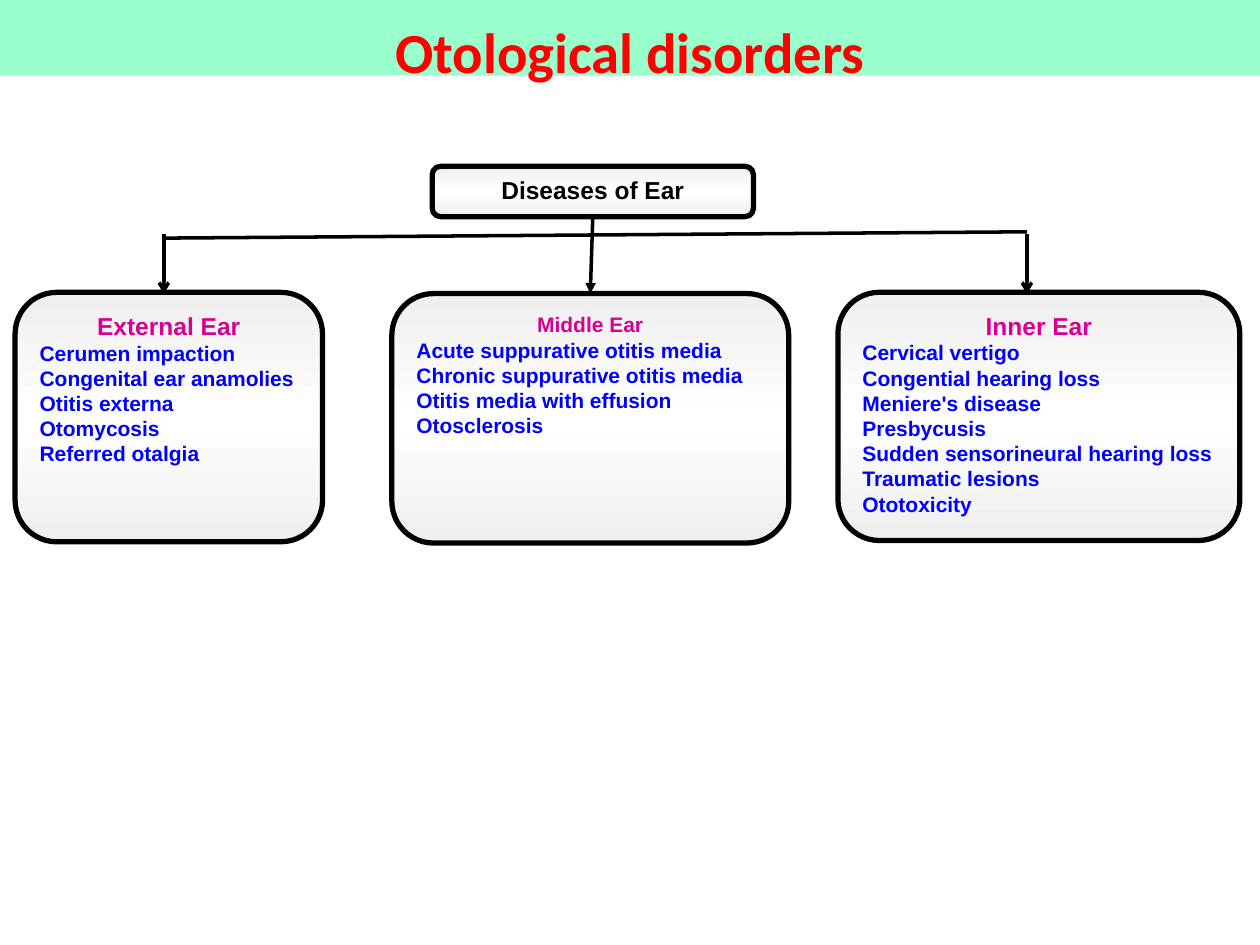
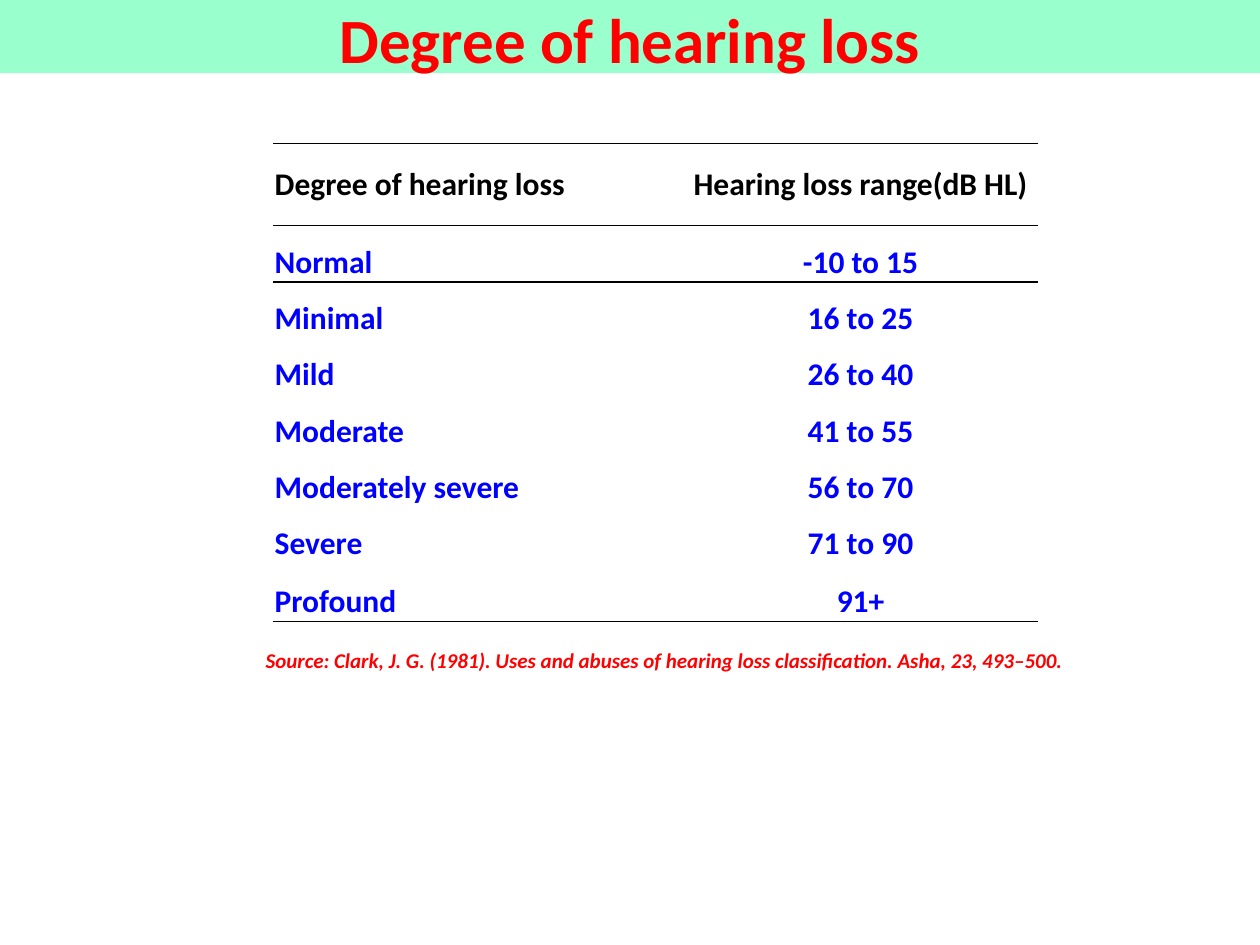
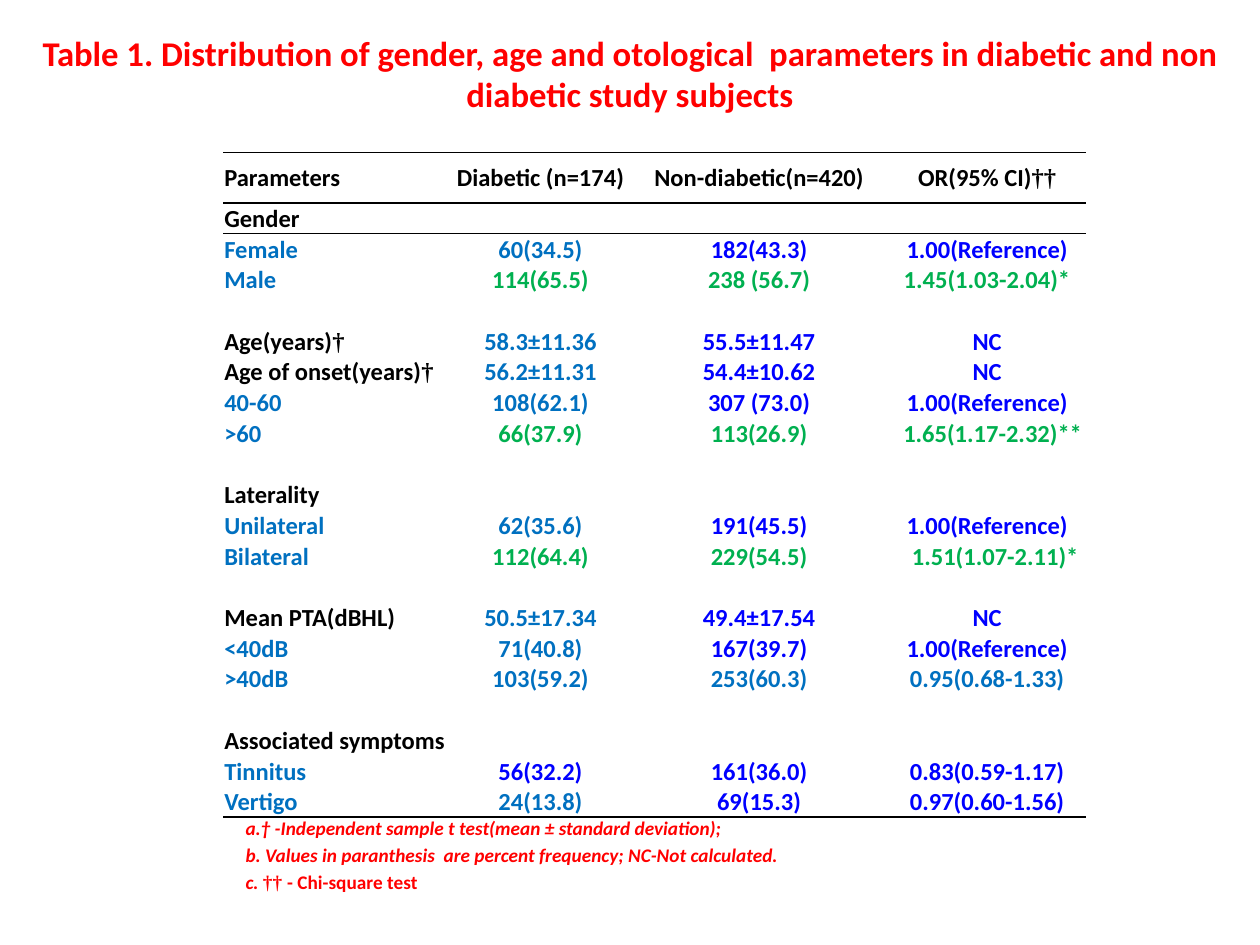
from copy import deepcopy
from dataclasses import dataclass
from itertools import groupby
from typing import NamedTuple, Optional, Sequence

from lxml.etree import SubElement
from pptx import Presentation
from pptx.dml.color import RGBColor
from pptx.enum.shapes import MSO_CONNECTOR, MSO_SHAPE
from pptx.enum.text import MSO_ANCHOR as Anchor, PP_ALIGN as Align
from pptx.oxml.ns import qn
from pptx.util import Inches, Pt

# Grid: 100 columns by 75 rows of square units
COLUMNS, ROWS = 100, 75
UNIT = Inches(0.1)

# Shared colours and fonts
RED = RGBColor(0xFF, 0x00, 0x00)
MINT = RGBColor(0x99, 0xFF, 0xCC)
MAGENTA = RGBColor(0xD6, 0x00, 0x93)
BLUE = RGBColor(0x00, 0x00, 0xFF)
SKY = RGBColor(0x00, 0x70, 0xC0)
GREEN = RGBColor(0x00, 0xB0, 0x50)
BLACK = RGBColor(0x00, 0x00, 0x00)
WHITE = RGBColor(0xFF, 0xFF, 0xFF)
SILVER = RGBColor(0xEF, 0xEF, 0xEF)
SANS, CHART_SANS, SERIF = "Calibri", "Arial", "Times New Roman"

PLAIN_TABLE = "{2D5ABB26-0587-4C30-8999-92F81FD0307C}"
CELL_INSET = Inches(0.01)


def units(count: float) -> int:
    return round(count * UNIT)


class Box(NamedTuple):
    """Left, top, width and height in grid units."""
    left: float
    top: float
    width: float
    height: float

    def lengths(self) -> list[int]:
        return [units(side) for side in self]


@dataclass(frozen=True)
class EarPart:
    name: str
    box: Box
    diseases: Sequence[str] = ()
    name_size: float = 14
    name_color: RGBColor = MAGENTA


@dataclass(frozen=True)
class TableRow:
    texts: Sequence[str]
    colors: Sequence[RGBColor]
    height: float
    anchor: Anchor = Anchor.BOTTOM
    ruled_above: bool = False
    ruled_below: bool = False
    nudge: float = 0  # extra left inset of the last cell


# Text and drawing helpers
def write(paragraph, text: str, *, size: float, color: RGBColor, font: str = SANS,
          italic: bool = False, align: Align = Align.LEFT) -> None:
    paragraph.alignment = align
    run = paragraph.add_run()
    run.text = text
    run.font.name, run.font.size = font, Pt(size)
    run.font.bold, run.font.italic = True, italic
    run.font.color.rgb = color


def add_text_frame(slide, box: Box, fill: Optional[RGBColor] = None):
    area = slide.shapes.add_textbox(*box.lengths())
    if fill is not None:
        area.fill.solid()
        area.fill.fore_color.rgb = fill
    area.text_frame.word_wrap = True
    return area.text_frame


def add_title(slide, text: str, box: Box, *, size: float, drop: float,
              band: Optional[RGBColor] = MINT) -> None:
    """Title centred in its band, lowered by drop grid units."""
    frame = add_text_frame(slide, box, band)
    frame.vertical_anchor = Anchor.MIDDLE
    frame.margin_top, frame.margin_bottom = units(2 * drop), 0
    write(frame.paragraphs[0], text, size=size, color=RED, align=Align.CENTER)


def add_ear_part(slide, part: EarPart):
    panel = slide.shapes.add_shape(MSO_SHAPE.ROUNDED_RECTANGLE, *part.box.lengths())
    panel.shadow.inherit = False
    panel.line.color.rgb, panel.line.width = BLACK, Pt(3)

    # Silver to white and back, from top to bottom
    panel.fill.gradient()
    panel.fill.gradient_angle = 90
    for stop in panel.fill.gradient_stops:
        stop.color.rgb = SILVER
    stops = panel.element.spPr.find(".//" + qn("a:gsLst"))
    stops.insert(1, deepcopy(stops[0]))
    middle = panel.fill.gradient_stops[1]
    middle.position, middle.color.rgb = 0.5, WHITE

    frame = panel.text_frame
    frame.word_wrap, frame.vertical_anchor = True, Anchor.TOP
    write(frame.paragraphs[0], part.name, size=part.name_size, color=part.name_color,
          font=CHART_SANS, align=Align.CENTER)
    for disease in part.diseases:
        write(frame.add_paragraph(), disease, size=12, color=BLUE, font=CHART_SANS)
    return panel


def add_line(slide, start: tuple[float, float], end: tuple[float, float],
             arrowhead: str = ""):
    line = slide.shapes.add_connector(
        MSO_CONNECTOR.STRAIGHT, *map(units, start), *map(units, end))
    line.line.color.rgb, line.line.width = BLACK, Pt(2)
    properties = line.element.spPr
    if arrowhead:
        SubElement(properties.find(qn("a:ln")), qn("a:tailEnd"), type=arrowhead)
    SubElement(properties, qn("a:effectLst"))
    return line


def rule_cell(cell, sides: Sequence[str]) -> None:
    properties = cell._tc.get_or_add_tcPr()
    for position, side in enumerate(sides):
        border = SubElement(properties, qn(f"a:{side}"), w=str(Pt(1)))
        fill = SubElement(border, qn("a:solidFill"))
        SubElement(fill, qn("a:srgbClr"), val=str(BLACK))
        properties.insert(position, border)


def fill_cell(cell, text: str, *, size: float, color: RGBColor, align: Align) -> None:
    paragraph = cell.text_frame.paragraphs[0]
    if not text:
        SubElement(paragraph._p, qn("a:endParaRPr"), sz=str(round(size * 100)))
    for is_dagger, letters in groupby(text, lambda letter: letter == "†"):
        write(paragraph, "".join(letters), size=size, color=color, align=align,
              font=SERIF if is_dagger else SANS)


def add_ruled_table(slide, left: float, top: float, widths: Sequence[float],
                    rows: Sequence[TableRow], size: float) -> None:
    box = Box(left, top, sum(widths), sum(row.height for row in rows))
    graphic = slide.shapes.add_table(len(rows), len(widths), *box.lengths())
    table = graphic.table
    table.first_row = table.horz_banding = False
    next(graphic.element.iter(qn("a:tableStyleId"))).text = PLAIN_TABLE
    for column, width in zip(table.columns, widths):
        column.width = units(width)
    for index, row in enumerate(rows):
        table.rows[index].height = units(row.height)
        sides = ["lnT"] * row.ruled_above + ["lnB"] * row.ruled_below
        for place, (text, color) in enumerate(zip(row.texts, row.colors)):
            cell = table.cell(index, place)
            cell.margin_left = cell.margin_right = cell.margin_top = CELL_INSET
            cell.margin_bottom = 0
            cell.vertical_anchor = row.anchor
            cell.fill.background()
            rule_cell(cell, sides)
            fill_cell(cell, text, color=color, size=size if index else size / 2,
                      align=Align.CENTER if place else Align.LEFT)
        if row.nudge:
            cell.margin_left = CELL_INSET + units(row.nudge)


def top_rows(headings: Sequence[str], spacer: float, height: float) -> list[TableRow]:
    """Empty spacer row and the ruled heading row below it."""
    count = len(headings)
    return [
        TableRow([""] * count, [BLACK] * count, spacer, ruled_below=True),
        TableRow(headings, [BLACK] * count, height, Anchor.MIDDLE, True, True),
    ]


# Slide 1: tree of ear diseases
ROOT = EarPart("Diseases of Ear", Box(34.3, 13.2, 25.5, 4), name_color=BLACK)
EXTERNAL = EarPart("External Ear", Box(1.2, 23.2, 24.4, 19.8), (
    "Cerumen impaction", "Congenital ear anamolies", "Otitis externa",
    "Otomycosis", "Referred otalgia"))
MIDDLE = EarPart("Middle Ear", Box(31.1, 23.3, 31.5, 19.8), (
    "Acute suppurative otitis media", "Chronic suppurative otitis media",
    "Otitis media with effusion", "Otosclerosis"), name_size=12)
INNER = EarPart("Inner Ear", Box(66.5, 23.2, 31.9, 19.7), (
    "Cervical vertigo", "Congential hearing loss", "Meniereʹs disease", "Presbycusis",
    "Sudden sensorineural hearing loss", "Traumatic lesions", "Ototoxicity"))
LEFT_BRANCH, RIGHT_BRANCH = 13, 81.5


def build_disorders(slide) -> None:
    add_title(slide, "Otological disorders", Box(0, 0, COLUMNS, 6), size=32.4, drop=1)
    trunk = add_line(slide, (46.9, 17.1), (47, 23.1), "triangle")
    add_line(slide, (LEFT_BRANCH, 18.9), (RIGHT_BRANCH, 18.4))
    root, _, middle, _ = [
        add_ear_part(slide, part) for part in (ROOT, EXTERNAL, MIDDLE, INNER)]
    trunk.begin_connect(root, 2)
    trunk.end_connect(middle, 0)
    for branch in (RIGHT_BRANCH, LEFT_BRANCH):
        add_line(slide, (branch, 18.6), (branch, 23.3), "arrow")


# Slide 2: degrees of hearing loss
DEGREES = (
    ("Normal", "-10 to 15"),
    ("Minimal", "16 to 25"),
    ("Mild", "26 to 40"),
    ("Moderate", "41 to 55"),
    ("Moderately severe", "56 to 70"),
    ("Severe", "71 to 90"),
    ("Profound", "91+"),
)


def build_degrees(slide) -> None:
    add_title(slide, "Degree of hearing loss", Box(0, -0.3, COLUMNS, 6.1),
              size=36, drop=0.3)
    rows = top_rows(("Degree of hearing loss", "Hearing loss range(dB HL)"), 4.6, 6.5)
    last = len(DEGREES) - 1
    rows += [
        TableRow(degree, (BLUE, BLUE), 4.6 if index == last else 4.47,
                 ruled_above=index == 0, ruled_below=index == last)
        for index, degree in enumerate(DEGREES)]
    add_ruled_table(slide, 21.7, 6.8, (32.5, 28.2), rows, size=18)
    source = add_text_frame(slide, Box(20.1, 50.9, 69.3, 3))
    write(source.paragraphs[0],
          "Source: Clark, J. G. (1981). Uses and abuses of hearing loss classification. "
          "Asha, 23, 493–500.", size=12, color=RED, italic=True)


# Slide 3: distribution of parameters
LINE = 2.4
COMPARED = (SKY, BLUE, BLUE)
SIGNIFICANT = (GREEN,) * 3
UNCHANGED = (SKY,) * 3
ASSOCIATED = (BLUE,) * 3


def group(heading: str) -> TableRow:
    return TableRow((heading, "", "", ""), (BLACK,) * 4, LINE,
                    ruled_above=heading == "Gender")


def measure(label: str, diabetic: str, non_diabetic: str, odds: str,
            colors: Sequence[RGBColor] = COMPARED, label_color: RGBColor = SKY,
            nudge: float = 0) -> TableRow:
    return TableRow((label, diabetic, non_diabetic, odds), (label_color, *colors), LINE,
                    ruled_below=label == "Vertigo", nudge=nudge)


GAP = group("")
REFERENCE = "1.00(Reference)"
PARAMETERS = (
    group("Gender"),
    measure("Female", "60(34.5)", "182(43.3)", REFERENCE),
    measure("Male", "114(65.5)", "238 (56.7)", "1.45(1.03-2.04)*", SIGNIFICANT),
    GAP,
    measure("Age(years)†", "58.3±11.36", "55.5±11.47", "NC", label_color=BLACK),
    measure("Age of onset(years)†", "56.2±11.31", "54.4±10.62", "NC", label_color=BLACK),
    measure("40-60", "108(62.1)", "307 (73.0)", REFERENCE),
    measure(">60", "66(37.9)", "113(26.9)", "1.65(1.17-2.32)**", SIGNIFICANT, nudge=0.9),
    GAP,
    group("Laterality"),
    measure("Unilateral", "62(35.6)", "191(45.5)", REFERENCE),
    measure("Bilateral", "112(64.4)", "229(54.5)", "1.51(1.07-2.11)*", SIGNIFICANT,
            nudge=1.3),
    GAP,
    measure("Mean PTA(dBHL)", "50.5±17.34", "49.4±17.54", "NC", label_color=BLACK),
    measure("<40dB", "71(40.8)", "167(39.7)", REFERENCE),
    measure(">40dB", "103(59.2)", "253(60.3)", "0.95(0.68-1.33)", UNCHANGED),
    GAP,
    group("Associated symptoms"),
    measure("Tinnitus", "56(32.2)", "161(36.0)", "0.83(0.59-1.17)", ASSOCIATED),
    measure("Vertigo", "24(13.8)", "69(15.3)", "0.97(0.60-1.56)"),
)

# Each footnote is a list of (text, font, italic)
FOOTNOTES = (
    [("a.† -Independent sample t test(mean ± standard deviation);", SANS, True)],
    [("b. Values in paranthesis  are percent frequency; NC-Not calculated.", SANS, True)],
    [("c. ", SANS, True), ("†† ", SERIF, False), ("- Chi-square test", SANS, False)],
)


def build_parameters(slide) -> None:
    add_title(slide, "Table 1. Distribution of gender, age and otological  parameters "
              "in diabetic and non diabetic study subjects",
              Box(0, 3, COLUMNS, 5.4), size=19.8, drop=0.1, band=None)
    headings = ("Parameters", "Diabetic (n=174)", "Non-diabetic(n=420)", "OR(95% CI)††")
    add_ruled_table(slide, 17.7, 10.7, (18.1, 14.2, 20.5, 15.7),
                    [*top_rows(headings, 1.4, 4), *PARAMETERS], size=14)
    notes = add_text_frame(slide, Box(18.5, 64.3, 79.5, 7.3))
    for index, footnote in enumerate(FOOTNOTES):
        paragraph = notes.add_paragraph() if index else notes.paragraphs[0]
        paragraph.space_before = Pt(2.2)
        for text, font, italic in footnote:
            write(paragraph, text, size=11, color=RED, font=font, italic=italic)


def main() -> None:
    deck = Presentation()
    deck.slide_width, deck.slide_height = units(COLUMNS), units(ROWS)
    blank = deck.slide_layouts[6]
    for build in (build_disorders, build_degrees, build_parameters):
        build(deck.slides.add_slide(blank))
    deck.save("out.pptx")


if __name__ == "__main__":
    main()
